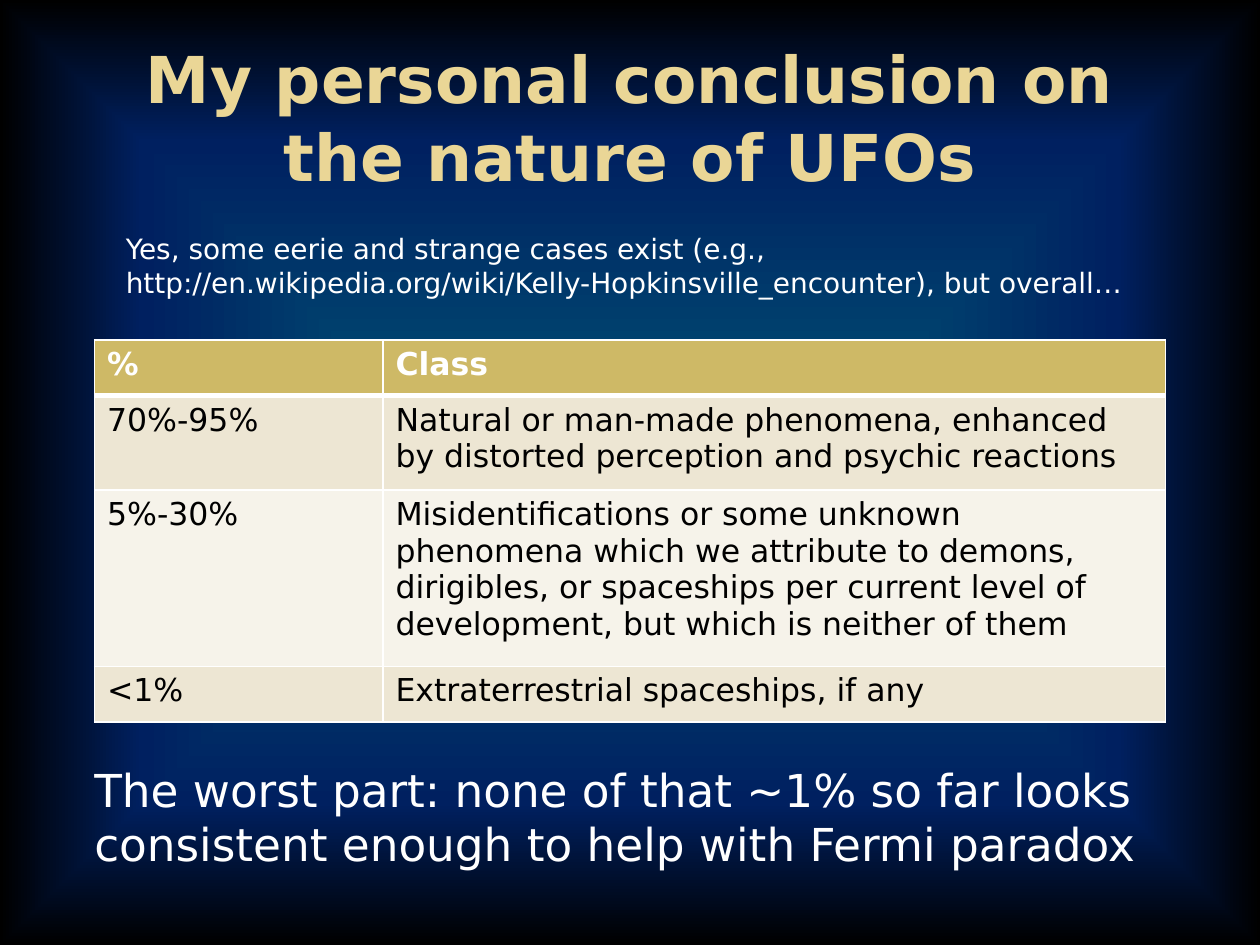
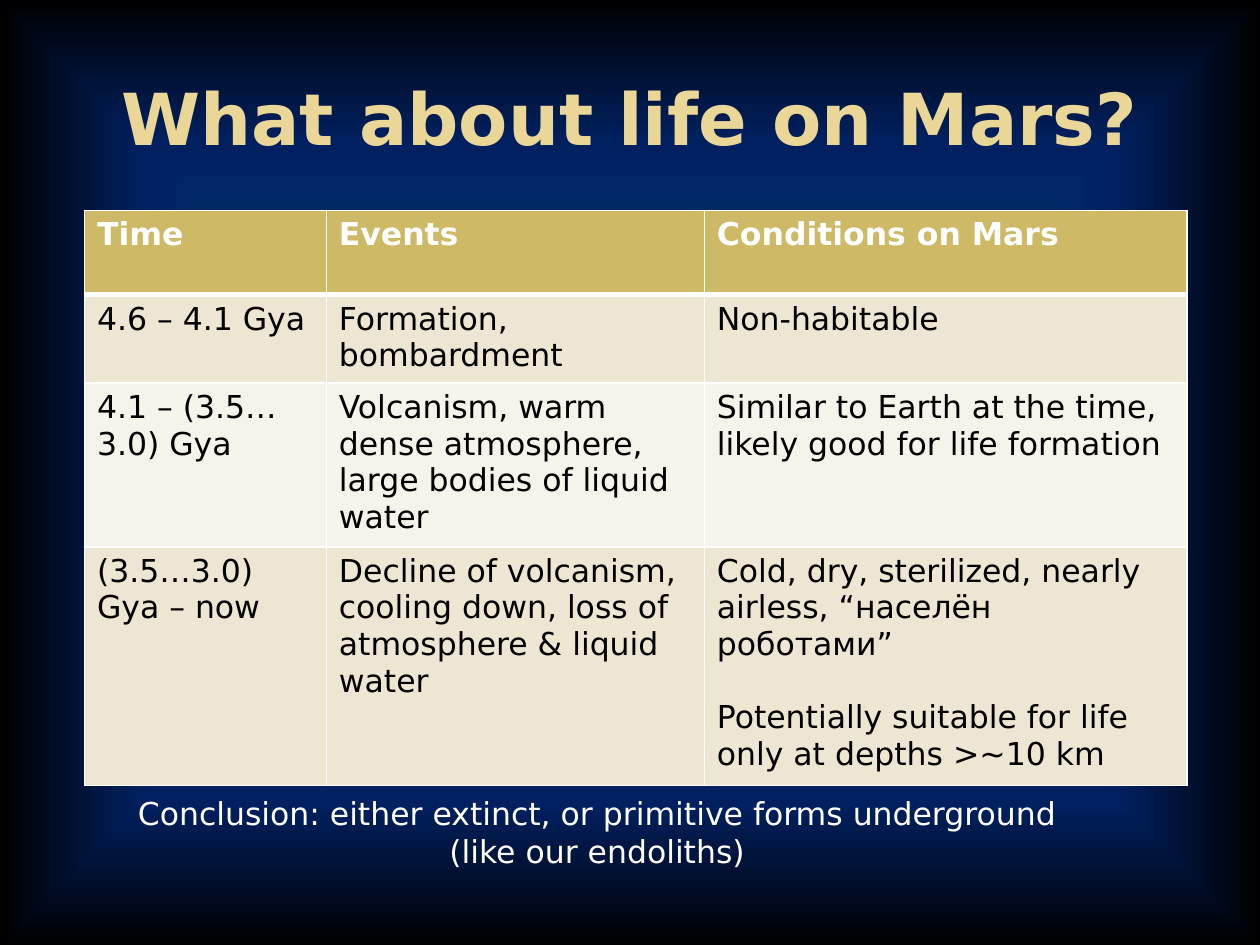
from dataclasses import dataclass

import lxml.etree
import pptx
import pptx.dml.color
import pptx.enum.text
import pptx.oxml
import pptx.oxml.ns
import pptx.util

ALIGN = pptx.enum.text.PP_ALIGN
ANCHOR = pptx.enum.text.MSO_ANCHOR
qn = pptx.oxml.ns.qn


@dataclass(frozen=True)
class Theme:
    font: str = "DejaVu Sans"
    white: str = "FFFFFF"
    black: str = "000000"
    header_fill: str = "CEB966"
    band_fills: tuple = ("EDE6D3", "F6F3EA")
    background_stops: tuple = ((0, "005878"), (70, "002060"), (100, "000000"))
    title_stops: tuple = ((0, "EAD696"), (73, "EAD696"), (100, "E7D081"))
    long_title_size: float = 36.9
    title_size: float = 41
    statement_size: float = 25.9
    table_size: float = 18
    note_size: float = 16
    hanging_indent: float = 0.6  # grid units
    thin_line: float = 1
    thick_line: float = 3


THEME = Theme()
COLUMNS, ROWS = 40, 30
CELL = pptx.util.Inches(10) // COLUMNS


def grid(units):
    return round(units * CELL)


def place(left, top, width, height):
    return [grid(value) for value in (left, top, width, height)]


def gradient_fill(stops, direction):
    """Build a gradient fill; direction is its closing XML element."""
    marks = "".join(
        f'<a:gs pos="{percent * 1000}"><a:srgbClr val="{color}"/></a:gs>'
        for percent, color in stops)
    return pptx.oxml.parse_xml(
        f'<a:gradFill {pptx.oxml.ns.nsdecls("a")} rotWithShape="1">'
        f"<a:gsLst>{marks}</a:gsLst>{direction}</a:gradFill>")


def replace_fill(parent, new_fill):
    parent.replace(parent.find(qn("a:gradFill")), new_fill)


# Shared background
def set_background(presentation):
    master = presentation.slide_master
    master.background.fill.gradient()
    center = '<a:fillToRect l="50000" t="50000" r="50000" b="50000"/>'
    replace_fill(master.element.find(".//" + qn("p:bgPr")),
                 gradient_fill(THEME.background_stops,
                               f'<a:path path="rect">{center}</a:path>'))


# Text
def style_paragraph(paragraph, size, color, bold=False, alignment=ALIGN.LEFT):
    paragraph.alignment = alignment
    for run in paragraph.runs:
        run.font.name = THEME.font
        run.font.size = pptx.util.Pt(size)
        run.font.bold = bold
        run.font.color.rgb = pptx.dml.color.RGBColor.from_string(color)


def add_text(slide, box, text, size, alignment=ALIGN.LEFT, indent=0,
             bold=False, anchor=ANCHOR.TOP, wrap=True):
    frame = slide.shapes.add_textbox(*place(*box)).text_frame
    frame.word_wrap = wrap
    frame.vertical_anchor = anchor
    frame.text = text
    for paragraph in frame.paragraphs:
        paragraph._p.get_or_add_pPr().set("marL", str(grid(indent)))
        style_paragraph(paragraph, size, THEME.white, bold, alignment)
    return frame


def add_title(slide, text, size):
    frame = add_text(slide, (2, 1.2, 36, 5), text, size, ALIGN.CENTER,
                     bold=True, anchor=ANCHOR.MIDDLE)
    font = frame.paragraphs[0].runs[0].font
    font.fill.gradient()
    replace_fill(frame.paragraphs[0].runs[0]._r.rPr,
                 gradient_fill(THEME.title_stops,
                               '<a:lin ang="4800000" scaled="0"/>'))


# Tables
def set_borders(cell, top, bottom):
    properties = cell._tc.get_or_add_tcPr()
    sides = {"L": THEME.thin_line, "R": THEME.thin_line, "T": top, "B": bottom}
    for position, (side, width) in enumerate(sides.items()):
        line = pptx.oxml.parse_xml(
            f'<a:ln{side} {pptx.oxml.ns.nsdecls("a")} w="{pptx.util.Pt(width)}">'
            f'<a:solidFill><a:srgbClr val="{THEME.white}"/></a:solidFill>'
            f"</a:ln{side}>")
        properties.insert(position, line)


def add_table(slide, left, top, widths, heights, rows):
    box = place(left, top, sum(widths), sum(heights))
    table = slide.shapes.add_table(len(rows), len(widths), *box).table
    table.first_row = table.horz_banding = False
    for column, width in zip(table.columns, widths):
        column.width = grid(width)
    for index, (row, height, texts) in enumerate(zip(table.rows, heights, rows)):
        row.height = grid(height)
        header = index == 0
        fill = THEME.header_fill if header else THEME.band_fills[(index - 1) % 2]
        for cell, text in zip(row.cells, texts):
            cell.fill.solid()
            cell.fill.fore_color.rgb = pptx.dml.color.RGBColor.from_string(fill)
            set_borders(cell,
                        THEME.thick_line if index == 1 else THEME.thin_line,
                        THEME.thick_line if header else THEME.thin_line)
            cell.text_frame.text = text
            for paragraph in cell.text_frame.paragraphs:
                style_paragraph(paragraph, THEME.table_size,
                                THEME.white if header else THEME.black, header)
    return table


# Slides
def build_ufo_slide(slide):
    add_title(slide, "My personal conclusion on the nature of UFOs",
              THEME.long_title_size)
    add_text(slide, (2, 24, 36, 5.28),
             "The worst part: none of that ~1% so far looks consistent enough "
             "to help with Fermi paradox",
             THEME.statement_size, indent=THEME.hanging_indent)
    add_table(slide, 3, 10.8, (9.16, 24.84), (1.76, 3, 5.6, 1.76), [
        ("%", "Class"),
        ("70%-95%", "Natural or man-made phenomena, enhanced by distorted "
                    "perception and psychic reactions"),
        ("5%-30%", "Misidentifications or some unknown phenomena which we "
                   "attribute to demons, dirigibles, or spaceships per current "
                   "level of development, but which is neither of them"),
        ("<1%", "Extraterrestrial spaceships, if any"),
    ])
    add_text(slide, (3, 7.16, 34, 3.68),
             "Yes, some eerie and strange cases exist (e.g., "
             "http://en.wikipedia.org/wiki/Kelly-Hopkinsville_encounter), "
             "but overall…",
             THEME.note_size, indent=THEME.hanging_indent)


def build_mars_slide(slide):
    add_title(slide, "What about life on Mars?", THEME.title_size)
    table = add_table(slide, 2.68, 6.68, (7.68, 12, 15.32), (2.68,) * 4, [
        ("Time", "Events", "Conditions on Mars"),
        ("4.6 – 4.1 Gya", "Formation, bombardment", "Non-habitable"),
        ("4.1 – (3.5…3.0) Gya",
         "Volcanism, warm dense atmosphere, large bodies of liquid water",
         "Similar to Earth at the time, likely good for life formation"),
        ("(3.5…3.0) Gya – now",
         "Decline of volcanism,\n"
         "cooling down, loss of atmosphere & liquid water",
         "Cold, dry, sterilized, nearly airless, “населён роботами”\n"
         "Potentially suitable for life only at depths >~10 km"),
    ])
    # One line of space between the two present-day conditions
    depth_note = table.cell(3, 2).text_frame.paragraphs[1]
    depth_note.space_before = pptx.util.Pt(21)
    add_text(slide, (3.68, 25, 30.56, 2.84),
             "Conclusion: either extinct, or primitive forms underground\n"
             "(like our endoliths)",
             THEME.table_size, ALIGN.CENTER, wrap=False)


def main():
    presentation = pptx.Presentation()
    presentation.slide_width = COLUMNS * CELL
    presentation.slide_height = ROWS * CELL
    set_background(presentation)
    blank_layout = presentation.slide_layouts[6]
    for build_slide in (build_ufo_slide, build_mars_slide):
        build_slide(presentation.slides.add_slide(blank_layout))
    presentation.save("out.pptx")


if __name__ == "__main__":
    main()
